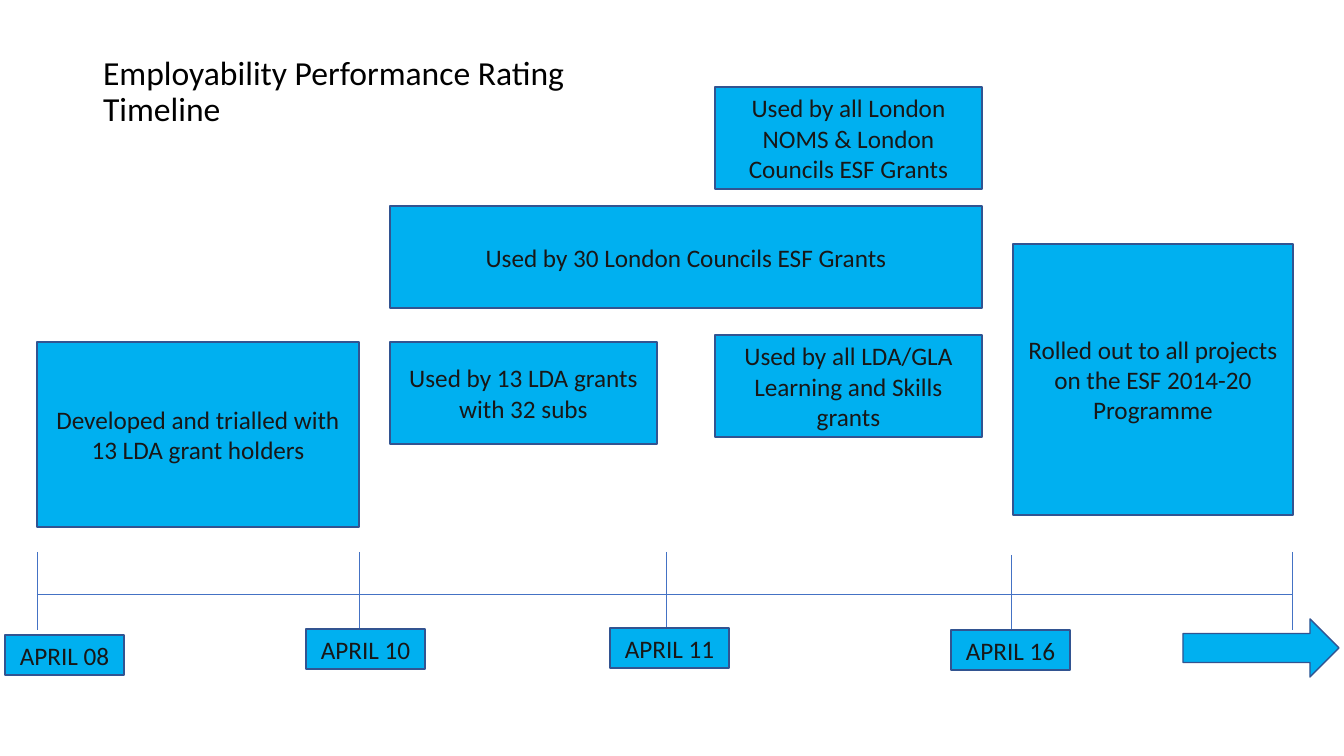
from lxml import etree
from pptx import Presentation
from pptx.dml.color import RGBColor
from pptx.enum.shapes import MSO_CONNECTOR, MSO_SHAPE
from pptx.enum.text import MSO_ANCHOR, MSO_AUTO_SIZE, PP_ALIGN
from pptx.oxml.ns import qn
from pptx.util import Emu, Pt

RECTANGLE = MSO_SHAPE.RECTANGLE
RIGHT_ARROW = MSO_SHAPE.RIGHT_ARROW
STRAIGHT = MSO_CONNECTOR.STRAIGHT
MIDDLE = MSO_ANCHOR.MIDDLE
NO_AUTOFIT = MSO_AUTO_SIZE.NONE
LEFT, CENTER = PP_ALIGN.LEFT, PP_ALIGN.CENTER

TITLE_ONLY_LAYOUT = 5
PX_PER_INCH = 100.8

AXIS_LEFT, AXIS_RIGHT, AXIS_Y = 37, 1292, 594
TICK_HEIGHT = 78
LABEL_WIDTH, LABEL_HEIGHT = 119, 40

# x and top of each tick
TICKS = [(AXIS_LEFT, 552), (359, 552), (666, 552), (1011, 555), (AXIS_RIGHT, 552)]

# text, left, top
DATES = [
    ("APRIL 08", 5, 635),
    ("APRIL 10", 306, 629),
    ("APRIL 11", 610, 628),
    ("APRIL 16", 951, 630),
]

# text, left, top, width, height
STAGES = [
    ("Developed and trialled with 13 LDA grant holders", 37, 342, 322, 185),
    ("Used by 13 LDA grants with 32 subs", 390, 342, 267, 102),
    ("Used by all LDA/GLA Learning and Skills grants", 715, 335, 267, 102),
    ("Used by 30 London Councils ESF Grants", 390, 206, 592, 102),
    ("Used by all London NOMS & London Councils ESF Grants", 715, 87, 267, 102),
    ("Rolled out to all projects on the ESF 2014-20 Programme", 1013, 244, 280, 271),
]


def px(length):
    return Emu(round(length * 914400 / PX_PER_INCH))


def color(value):
    return RGBColor.from_string(value)


class TimelineSlide:
    font = "Calibri"
    title_color = "000000"
    text_color = "181717"
    fill_color = "00B0F0"
    outline_color = "325491"
    axis_color = "4472C4"

    def __init__(self, presentation):
        layout = presentation.slide_layouts[TITLE_ONLY_LAYOUT]
        self.slide = presentation.slides.add_slide(layout)

    def add_text(self, frame, text, size, text_color, alignment):
        frame.word_wrap = True
        frame.vertical_anchor = MIDDLE
        paragraph = frame.paragraphs[0]
        paragraph.alignment = alignment
        run = paragraph.add_run()
        run.text = text
        run.font.name = self.font
        run.font.size = Pt(size)
        run.font.color.rgb = color(text_color)
        return paragraph

    def title(self, text, left, top, width, height):
        shape = self.slide.shapes.title
        shape.left, shape.top = px(left), px(top)
        shape.width, shape.height = px(width), px(height)
        shape.text_frame.auto_size = NO_AUTOFIT
        paragraph = self.add_text(shape.text_frame, text, 24, self.title_color, LEFT)
        paragraph.line_spacing = 0.9

    def line(self, x1, y1, x2, y2):
        connector = self.slide.shapes.add_connector(
            STRAIGHT, px(x1), px(y1), px(x2), px(y2))
        connector.line.color.rgb = color(self.axis_color)
        connector.line.width = Pt(0.5)
        etree.SubElement(connector.element.spPr, qn("a:effectLst"))

    def block(self, kind, left, top, width, height):
        shape = self.slide.shapes.add_shape(
            kind, px(left), px(top), px(width), px(height))
        shape.shadow.inherit = False
        shape.fill.solid()
        shape.fill.fore_color.rgb = color(self.fill_color)
        shape.line.color.rgb = color(self.outline_color)
        shape.line.width = Pt(1)
        return shape

    def box(self, text, left, top, width, height):
        shape = self.block(RECTANGLE, left, top, width, height)
        self.add_text(shape.text_frame, text, 18, self.text_color, CENTER)


def main():
    presentation = Presentation()
    presentation.slide_width, presentation.slide_height = px(1344), px(756)
    timeline = TimelineSlide(presentation)

    timeline.title("Employability Performance Rating Timeline", 93, 40, 606, 105)
    timeline.line(AXIS_LEFT, AXIS_Y, AXIS_RIGHT, AXIS_Y)
    for x, top in TICKS:
        timeline.line(x, top, x, top + TICK_HEIGHT)
    for text, left, top in DATES:
        timeline.box(text, left, top, LABEL_WIDTH, LABEL_HEIGHT)
    timeline.block(RIGHT_ARROW, 1183, 619, 156, 58)
    for stage in STAGES:
        timeline.box(*stage)

    presentation.save("out.pptx")


if __name__ == "__main__":
    main()
